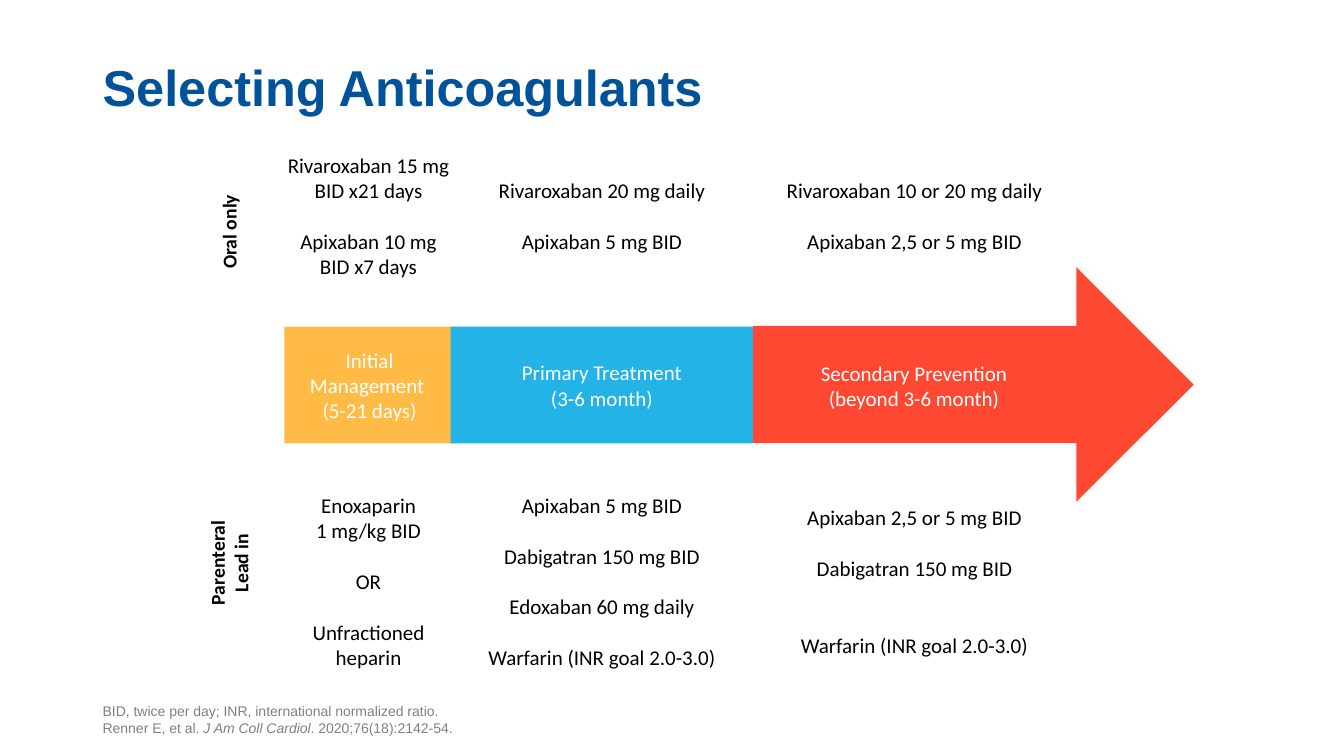
from pptx import Presentation
from pptx.dml.color import RGBColor
from pptx.enum.shapes import MSO_SHAPE
from pptx.enum.text import MSO_ANCHOR, PP_ALIGN
from pptx.util import Emu, Pt

RECTANGLE, ARROW = MSO_SHAPE.RECTANGLE, MSO_SHAPE.RIGHT_ARROW
MIDDLE, BOTTOM = MSO_ANCHOR.MIDDLE, MSO_ANCHOR.BOTTOM
LEFT, CENTER = PP_ALIGN.LEFT, PP_ALIGN.CENTER

NAVY = RGBColor(0x00, 0x53, 0x9B)
GRAY = RGBColor(0x80, 0x80, 0x80)
BLACK = RGBColor(0x00, 0x00, 0x00)
WHITE = RGBColor(0xFF, 0xFF, 0xFF)
AMBER = RGBColor(0xFF, 0xBB, 0x45)
BLUE = RGBColor(0x23, 0xB3, 0xE6)
RED = RGBColor(0xFF, 0x48, 0x32)


def px(length):
    """Convert px (100 to the inch) to EMU."""
    return Emu(length * 9144)


class Board:
    heading_font = "Arial"
    body_font = "Calibri"
    body_size = 15
    line_gap = 18.3  # one body line, in points

    def __init__(self, slide):
        self.slide = slide

    def style(self, paragraph, size, color, font, bold=False, align=CENTER):
        paragraph.alignment = align
        paragraph.font.size = Pt(size)
        paragraph.font.name = font
        paragraph.font.bold = bold
        paragraph.font.color.rgb = color

    def fill_text(self, frame, lines, color=BLACK, size=body_size, bold=False):
        """Fill a frame with centred (text, blank lines before) pairs."""
        frame.word_wrap = True
        frame.vertical_anchor = MIDDLE
        for index, (text, gap) in enumerate(lines):
            paragraph = frame.add_paragraph() if index else frame.paragraphs[0]
            paragraph.text = text
            self.style(paragraph, size, color, self.body_font, bold)
            if gap:
                paragraph.space_before = Pt(gap * self.line_gap)

    def text_box(self, left, top, width, height):
        return self.slide.shapes.add_textbox(*map(px, (left, top, width, height)))

    def heading_frame(self, top, height):
        frame = self.text_box(92, top, 1150, height).text_frame
        frame.word_wrap = True
        frame.vertical_anchor = BOTTOM
        return frame

    def title(self, text):
        paragraph = self.heading_frame(0, 121).paragraphs[0]
        paragraph.text = text
        paragraph.line_spacing = 0.9
        self.style(paragraph, 36, NAVY, self.heading_font, True, LEFT)

    def footnote(self, note, authors, journal, issue):
        paragraph = self.heading_frame(695, 40).paragraphs[0]
        paragraph.text = note + "\n" + authors
        italic = paragraph.add_run()
        italic.text = journal
        italic.font.italic = True
        paragraph.add_run().text = issue
        self.style(paragraph, 10, GRAY, self.heading_font, align=LEFT)

    def row_label(self, text, middle, height):
        label = self.text_box(151, middle - height // 2, 152, height)
        label.rotation = 270
        self.fill_text(label.text_frame, [(text, 0)], size=14, bold=True)

    def drugs(self, left, top, width, height, lines):
        self.fill_text(self.text_box(left, top, width, height).text_frame, lines)

    def phase(self, kind, left, top, width, height, color):
        shape = self.slide.shapes.add_shape(kind, *map(px, (left, top, width, height)))
        shape.shadow.inherit = False
        shape.fill.solid()
        shape.fill.fore_color.rgb = color
        shape.line.fill.background()
        return shape


def main():
    presentation = Presentation()
    presentation.slide_width, presentation.slide_height = px(1333), px(750)
    board = Board(presentation.slides.add_slide(presentation.slide_layouts[6]))

    board.title("Selecting Anticoagulants")
    board.footnote("BID, twice per day; INR, international normalized ratio. ",
                   "Renner E, et al. ", "J Am Coll Cardiol", ". 2020;76(18):2142-54.")

    # Treatment routes
    board.row_label("Oral only", 230, 34)
    board.row_label("Parenteral\nLead in", 558, 57)

    # Drugs by phase: left, width, oral lines, parenteral lines
    warfarin = "Warfarin (INR goal 2.0-3.0)"
    columns = [
        (271, 189,
         [("Rivaroxaban 15 mg\nBID x21 days", 0), ("Apixaban 10 mg\nBID x7 days", 1)],
         [("Enoxaparin\n1 mg/kg BID", 0), ("OR", 1), ("Unfractioned\nheparin", 1)]),
        (469, 256,
         [("Rivaroxaban 20 mg daily", 0), ("Apixaban 5 mg BID", 1)],
         [("Apixaban 5 mg BID", 0), ("Dabigatran 150 mg BID", 1),
          ("Edoxaban 60 mg daily", 1), (warfarin, 1)]),
        (769, 276,
         [("Rivaroxaban 10 or 20 mg daily", 0), ("Apixaban 2,5 or 5 mg BID", 1)],
         [("Apixaban 2,5 or 5 mg BID", 0), ("Dabigatran 150 mg BID", 1), (warfarin, 2)]),
    ]
    for left, width, oral, parenteral in columns:
        board.drugs(left, 146, width, 136, oral)
        board.drugs(left, 483, width, 187, parenteral)

    # Timeline of phases
    initial = board.phase(RECTANGLE, 282, 324, 169, 116, AMBER)
    board.fill_text(initial.text_frame, [("Initial\nManagement \n(5-21 days)", 0)], WHITE)
    primary = board.phase(RECTANGLE, 447, 324, 300, 116, BLUE)
    board.fill_text(primary.text_frame, [("Primary Treatment", 0), ("(3-6 month)", 0)], WHITE)
    board.phase(ARROW, 747, 265, 437, 233, RED)
    secondary = board.text_box(747, 347, 319, 71)
    board.fill_text(secondary.text_frame,
                    [("Secondary Prevention", 0), ("(beyond 3-6 month)", 0)], WHITE)

    presentation.save("out.pptx")


if __name__ == "__main__":
    main()
